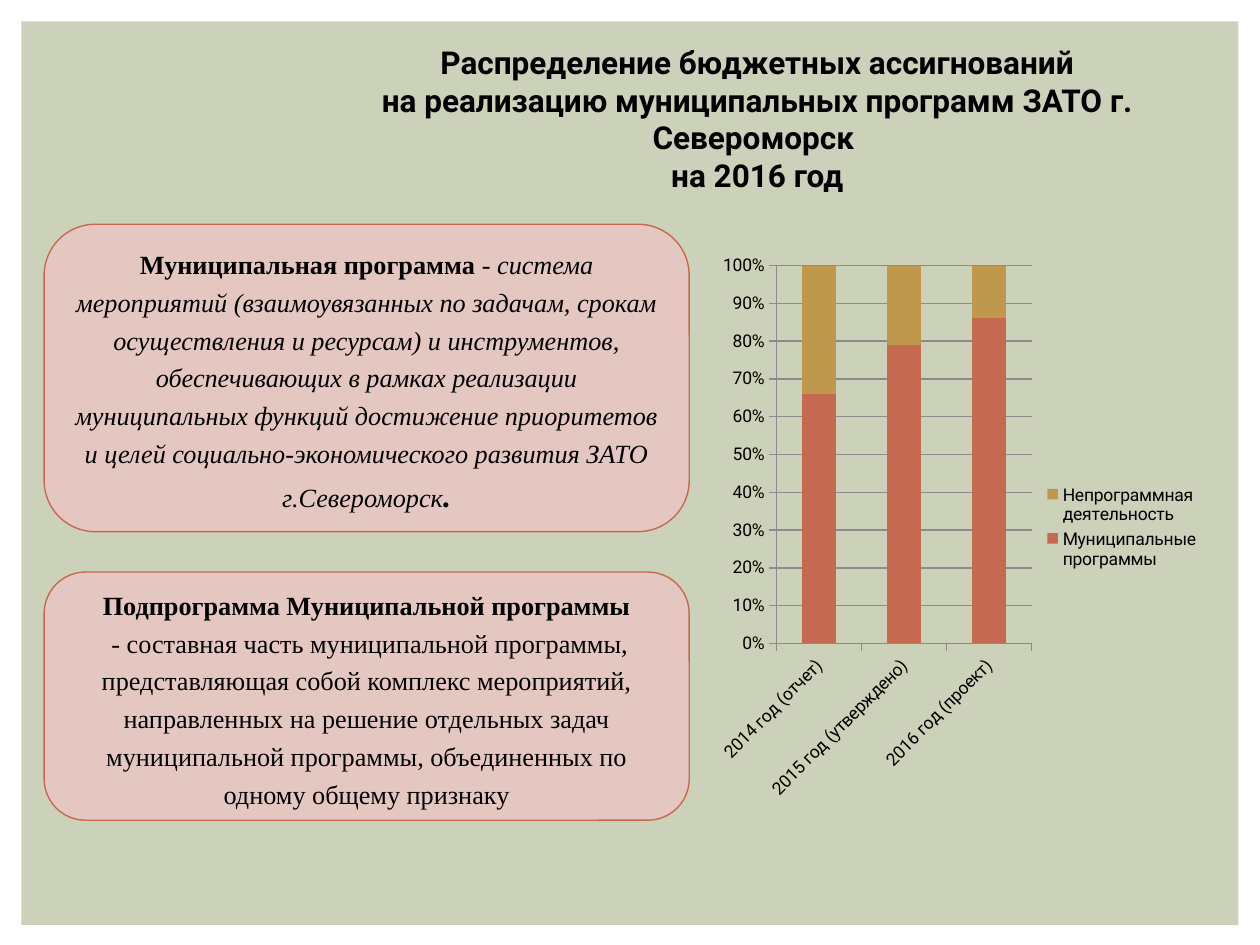
from dataclasses import dataclass

from pptx import Presentation
from pptx.chart.data import CategoryChartData
from pptx.dml.color import RGBColor
from pptx.enum.chart import XL_CHART_TYPE, XL_LEGEND_POSITION, XL_TICK_MARK
from pptx.enum.shapes import MSO_SHAPE
from pptx.enum.text import MSO_ANCHOR, PP_ALIGN
from pptx.util import Inches, Pt

RECT, ROUNDED = MSO_SHAPE.RECTANGLE, MSO_SHAPE.ROUNDED_RECTANGLE
CENTER, MIDDLE = PP_ALIGN.CENTER, MSO_ANCHOR.MIDDLE
STACKED_100 = XL_CHART_TYPE.COLUMN_STACKED_100
LEGEND_RIGHT, TICK_OUT = XL_LEGEND_POSITION.RIGHT, XL_TICK_MARK.OUTSIDE


@dataclass(frozen=True)
class Theme:
    """Colours, fonts and type sizes of the slide."""
    panel: RGBColor = RGBColor.from_string("CCD1B9")
    card: RGBColor = RGBColor.from_string("E5C7C2")
    accent: RGBColor = RGBColor.from_string("C66951")
    gold: RGBColor = RGBColor.from_string("BF974D")
    grid: RGBColor = RGBColor.from_string("8B8B8B")
    text: RGBColor = RGBColor.from_string("000000")
    sans: str = "Roboto"
    serif: str = "Times New Roman"
    title: Pt = Pt(18)
    body: Pt = Pt(15)
    label: Pt = Pt(10)


THEME = Theme()

TITLE = [
    "Распределение бюджетных ассигнований",
    "на реализацию муниципальных программ ЗАТО г. Североморск ",
    "на 2016 год",
]
PROGRAM = [[
    ("Муниципальная программа ", {"bold": True}),
    ("- ", {}),
    ("система мероприятий (взаимоувязанных по задачам, срокам осуществления и "
     "ресурсам) и инструментов, обеспечивающих в рамках реализации муниципальных "
     "функций достижение приоритетов и целей социально-экономического развития "
     "ЗАТО г.Североморск", {"italic": True}),
    (".", {"bold": True, "italic": True, "size": THEME.title}),
]]
SUBPROGRAM = [
    [("Подпрограмма Муниципальной программы", {"bold": True})],
    [(" - составная часть муниципальной программы, представляющая собой комплекс "
      "мероприятий, направленных на решение отдельных задач муниципальной "
      "программы, объединенных по одному общему признаку", {})],
]
YEARS = ["2014 год (отчет)", "2015 год (утверждено)", "2016 год (проект)"]
SERIES = [
    ("Муниципальные программы ", (66, 79, 86), THEME.accent),
    ("Непрограммная деятельность", (34, 21, 14), THEME.gold),
]


def set_font(font, name, size, bold=None):
    """Apply a typeface, a size and the text colour."""
    font.name, font.size, font.bold = name, size, bold
    font.color.rgb = THEME.text


def add_panel(s, box):
    """Draw the plain backdrop."""
    sp = s.shapes.add_shape(RECT, *map(Inches, box))
    sp.shadow.inherit = False
    sp.fill.solid()
    sp.fill.fore_color.rgb = THEME.panel
    sp.line.fill.background()


def add_title(s, box, lines):
    """Write the centred heading, one paragraph a line."""
    tf = s.shapes.add_textbox(*map(Inches, box)).text_frame
    tf.word_wrap = True
    tf.text = "\n".join(lines)
    for p in tf.paragraphs:
        p.alignment = CENTER
        set_font(p.font, THEME.sans, THEME.title, True)


def add_card(s, box, paragraphs):
    """Draw a rounded definition card with mixed-style text."""
    sp = s.shapes.add_shape(ROUNDED, *map(Inches, box))
    sp.shadow.inherit = False
    sp.fill.solid()
    sp.fill.fore_color.rgb = THEME.card
    sp.line.color.rgb = THEME.accent
    sp.line.width = Pt(0.79)
    tf = sp.text_frame
    tf.word_wrap = True
    tf.vertical_anchor = MIDDLE
    for i, runs in enumerate(paragraphs):
        p = tf.add_paragraph() if i else tf.paragraphs[0]
        p.alignment = CENTER
        p.line_spacing = 1.2
        set_font(p.font, THEME.serif, THEME.body)
        for text, style in runs:
            r = p.add_run()
            r.text = text
            for key, value in style.items():
                setattr(r.font, key, value)


def add_share_chart(s, box):
    """Chart programme and non-programme shares by year."""
    data = CategoryChartData()
    data.categories = YEARS
    for name, values, _ in SERIES:
        data.add_series(name, values)
    chart = s.shapes.add_chart(STACKED_100, *map(Inches, box), data).chart
    set_font(chart.font, THEME.sans, THEME.title)
    chart.has_title = False
    chart.has_legend = True
    chart.legend.position = LEGEND_RIGHT
    chart.legend.include_in_layout = False
    set_font(chart.legend.font, THEME.sans, THEME.label)
    plot = chart.plots[0]
    plot.gap_width, plot.overlap = 150, 100
    plot.vary_by_categories = False
    for series, (_, _, color) in zip(plot.series, SERIES):
        series.format.fill.solid()
        series.format.fill.fore_color.rgb = color
    for axis in (chart.category_axis, chart.value_axis):
        axis.major_tick_mark = TICK_OUT
        axis.format.line.color.rgb = THEME.grid
        set_font(axis.tick_labels.font, THEME.sans, THEME.label)
    values = chart.value_axis
    values.has_major_gridlines = True
    values.major_gridlines.format.line.color.rgb = THEME.grid
    values.tick_labels.number_format = "0%"
    values.tick_labels.number_format_is_linked = False


def main():
    """Build and save the slide."""
    prs = Presentation()
    prs.slide_width, prs.slide_height = Inches(10), Inches(7.5)
    s = prs.slides.add_slide(prs.slide_layouts[6])
    add_panel(s, (0.17, 0.17, 9.66, 7.17))
    add_title(s, (2.32, 0.29, 7.38, 1.01), TITLE)
    add_share_chart(s, (5.63, 1.94, 3.99, 4.49))
    add_card(s, (0.35, 1.78, 5.12, 2.44), PROGRAM)
    add_card(s, (0.35, 4.54, 5.12, 1.97), SUBPROGRAM)
    prs.save("out.pptx")


if __name__ == "__main__":
    main()
